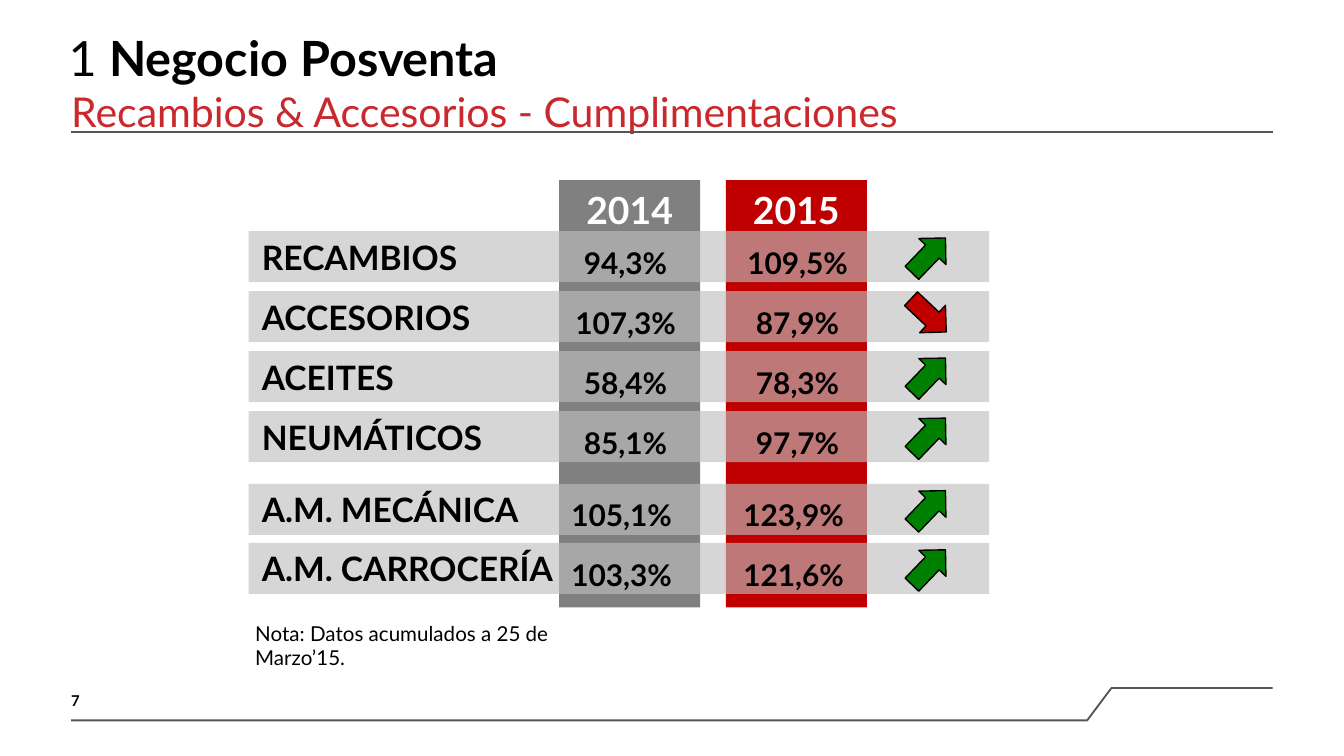
"""Build the slide on after-sales fulfilment in 2014 and 2015."""
from lxml.etree import SubElement
from pptx import Presentation
from pptx.dml.color import RGBColor
from pptx.enum.shapes import MSO_CONNECTOR, MSO_SHAPE
from pptx.enum.text import MSO_ANCHOR, MSO_AUTO_SIZE, PP_ALIGN
from pptx.oxml.ns import qn
from pptx.util import Inches, Pt

COLORS = {name: RGBColor.from_string(value) for name, value in {
    "black": "000000", "white": "FFFFFF", "rule": "565656", "subtitle": "C9282D",
    "2014": "808080", "2015": "C00000", "bar": "BFBFBF", "up": "008000", "down": "C00000",
}.items()}
SLIDE_WIDTH = 10
SLIDE_HEIGHT = SLIDE_WIDTH * 9 / 16
MARGIN, CONTENT_WIDTH = 0.53, 8.94
YEAR_LEFTS = {"2015": 5.4, "2014": 4.16}
VALUE_LEFTS = {"2015": 5.44, "2014": 4.16}
YEAR_WIDTH, YEAR_TOP, YEAR_HEIGHT = 1.05, 1.34, 3.18
BAR_LEFT, BAR_WIDTH, BAR_HEIGHT = 1.85, 5.51, 0.38
GROUP_TOPS, GROUP_STEPS, GROUP_SHIFTS = (1.72, 3.6), (1.34 / 3, 0.44), (0, 0.03)
ARROW_LEFT, ARROW_ANGLES = 6.77, {"up": 223.9, "down": 313.3}
GROUPS = [
    [
        ("RECAMBIOS", "94,3%", "109,5%", "up"),
        ("ACCESORIOS", "107,3%", "87,9%", "down"),
        ("ACEITES", "58,4%", "78,3%", "up"),
        ("NEUMÁTICOS", "85,1%", "97,7%", "up"),
    ],
    [
        ("A.M. MECÁNICA", "105,1%", "123,9%", "up"),
        ("A.M. CARROCERÍA", "103,3%", "121,6%", "up"),
    ],
]


def write(shape, text, size, color="black", bold=False, align=PP_ALIGN.LEFT,
          anchor=MSO_ANCHOR.TOP, inset=None):
    frame = shape.text_frame
    frame.word_wrap = True
    frame.auto_size = MSO_AUTO_SIZE.NONE
    frame.vertical_anchor = anchor
    if inset is not None:
        frame.margin_left = frame.margin_right = Inches(inset)
        frame.margin_top = frame.margin_bottom = Inches(inset)
    para = frame.paragraphs[0]
    para.add_run().text = text
    para.alignment = align
    para.font.name, para.font.size, para.font.bold = "Lato", Pt(size), bold
    para.font.color.rgb = COLORS[color]
    return para


def add_block(kind, left, top, width, height, color):
    block = page.shapes.add_shape(kind, *map(Inches, (left, top, width, height)))
    block.shadow.inherit = False
    block.fill.solid()
    block.fill.fore_color.rgb = COLORS[color]
    block.line.fill.background()
    return block


deck = Presentation()
deck.slide_width, deck.slide_height = Inches(SLIDE_WIDTH), Inches(SLIDE_HEIGHT)
page = deck.slides.add_slide(deck.slide_layouts[1])

header_rule = page.shapes.add_connector(
    MSO_CONNECTOR.STRAIGHT, Inches(MARGIN), Inches(0.98),
    Inches(MARGIN + CONTENT_WIDTH), Inches(0.98))
SubElement(header_rule._element.spPr, qn("a:effectLst"))
builder = page.shapes.build_freeform(Inches(MARGIN), Inches(5.36))
builder.add_line_segments(
    [(Inches(x), Inches(y)) for x, y in ((8.09, 5.36), (8.27, 5.12), (9.47, 5.12))],
    close=False)
footer_rule = builder.convert_to_shape()
footer_rule.shadow.inherit = False
footer_rule.fill.background()
for rule in (header_rule, footer_rule):
    rule.line.color.rgb = COLORS["rule"]
    rule.line.width = Pt(1)

number = page.shapes.add_textbox(*map(Inches, (MARGIN, 5.12, 0.37, 0.16)))
write(number, "7", 8, bold=True, anchor=MSO_ANCHOR.BOTTOM, inset=0)

title, subtitle = page.placeholders
for box, left, top in ((title, 0.51, 0.21), (subtitle, MARGIN, 0.64)):
    box.left, box.top = Inches(left), Inches(top)
    box.width, box.height = Inches(CONTENT_WIDTH), Inches(0.35)
para = write(title, "1 ", 26, inset=0)
span = para.add_run()
span.text = "Negocio Posventa"
span.font.bold = True
properties = subtitle.text_frame.paragraphs[0]._p.get_or_add_pPr()
properties.set("marL", "0")
properties.set("indent", "0")
SubElement(properties, qn("a:buNone"))
para = write(subtitle, "Recambios & Accesorios - Cumplimentaciones", 22, "subtitle", inset=0)
para.space_before = Pt(0)

for year, left in YEAR_LEFTS.items():
    column = add_block(MSO_SHAPE.RECTANGLE, left, YEAR_TOP, YEAR_WIDTH, YEAR_HEIGHT, year)
    write(column, year, 20, "white", bold=True, align=PP_ALIGN.CENTER)

for rows, first_top, step, shift in zip(GROUPS, GROUP_TOPS, GROUP_STEPS, GROUP_SHIFTS):
    for index, (label, value_2014, value_2015, trend) in enumerate(rows):
        top = first_top + index * step
        bar = add_block(MSO_SHAPE.RECTANGLE, BAR_LEFT, top, BAR_WIDTH, BAR_HEIGHT, "bar")
        bar_color = bar.fill._xPr.find(qn("a:solidFill"))[0]
        SubElement(bar_color, qn("a:alpha")).set("val", "63000")
        write(bar, label, 18, bold=True, anchor=MSO_ANCHOR.MIDDLE)

        for year, value in (("2015", value_2015), ("2014", value_2014)):
            left = VALUE_LEFTS[year] - shift
            box = page.shapes.add_textbox(*map(Inches, (left, top + 0.05, YEAR_WIDTH, 0.37)))
            write(box, value, 16, bold=True, align=PP_ALIGN.CENTER)
            box.text_frame.margin_right = Inches(0.16)

        arrow = add_block(MSO_SHAPE.DOWN_ARROW, ARROW_LEFT, top, 0.28, 0.36, trend)
        arrow.rotation = ARROW_ANGLES[trend]
        arrow.line.color.rgb = COLORS["black"]
        arrow.line.width = Pt(0.75)

note = page.shapes.add_textbox(*map(Inches, (1.8, 4.57, 3.02, 0.29)))
write(note, "Nota: Datos acumulados a 25 de Marzo’15.", 11)

deck.save("out.pptx")
